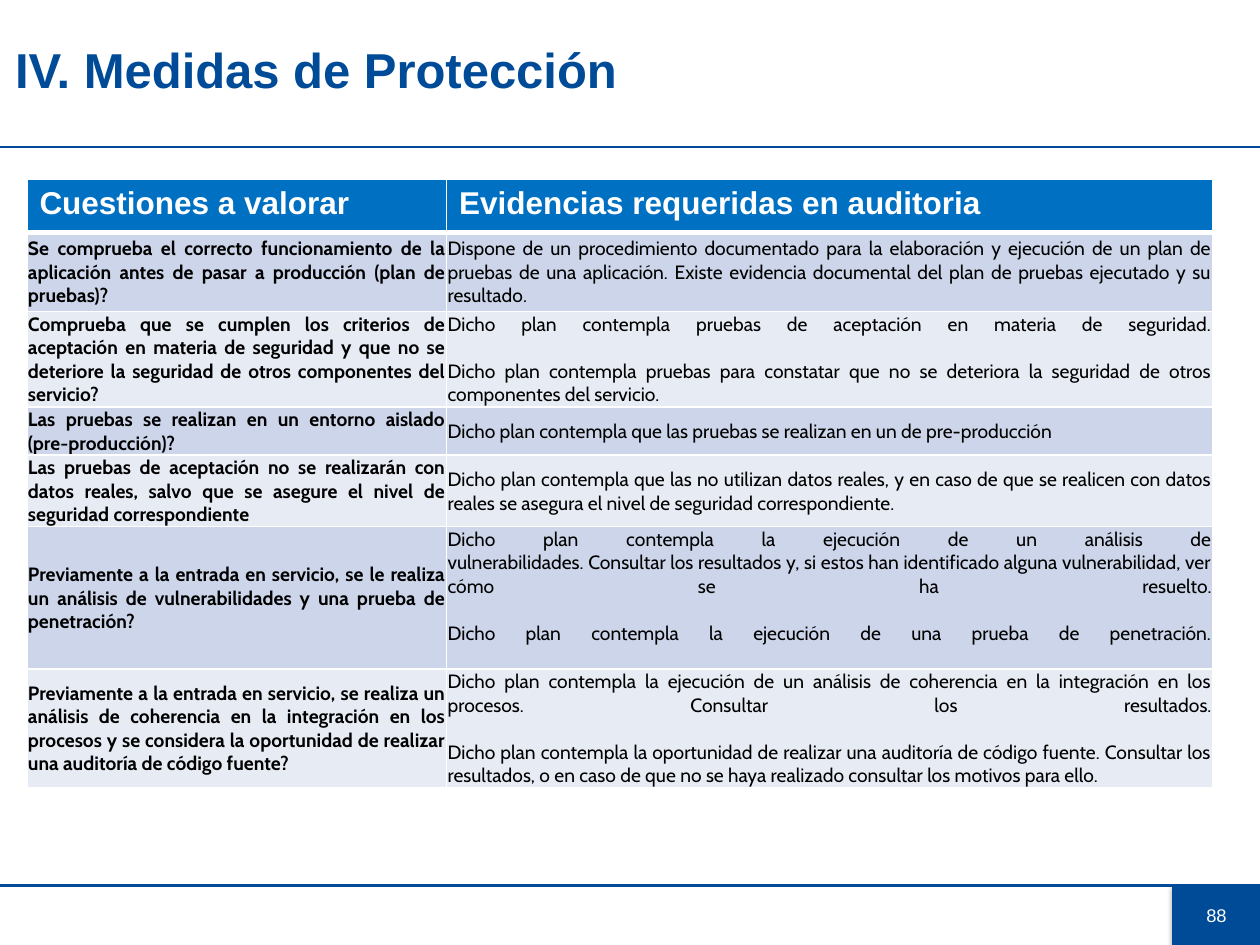
from copy import deepcopy

from lxml.etree import SubElement
from pptx import Presentation
from pptx.dml.color import RGBColor
from pptx.enum.shapes import MSO_CONNECTOR, MSO_SHAPE
from pptx.enum.text import MSO_ANCHOR, PP_ALIGN
from pptx.oxml.ns import qn
from pptx.util import Pt

NAVY = RGBColor(0x00, 0x4B, 0x98)
HEADER_BLUE = RGBColor(0x00, 0x70, 0xC2)
BANDS = (RGBColor(0xCC, 0xD5, 0xE9), RGBColor(0xE7, 0xEB, 0xF4))
WHITE = RGBColor(0xFF, 0xFF, 0xFF)
BLACK = RGBColor(0x00, 0x00, 0x00)

TITLE = "IV. Medidas de Protección"
PAGE_NUMBER = "88"
HEADINGS = ("Cuestiones a valorar", "Evidencias requeridas en auditoria")
# question, evidence, row height
QUESTIONS = [
    ("Se comprueba el correcto funcionamiento de la aplicación antes de pasar a producción "
     "(plan de pruebas)?",
     "Dispone de un procedimiento documentado para la elaboración y ejecución de un plan de "
     "pruebas de una aplicación. Existe evidencia documental del plan de pruebas ejecutado y "
     "su resultado.", 45.4),
    ("Comprueba que se cumplen los criterios de aceptación en materia de seguridad y que no se "
     "deteriore la seguridad de otros componentes del servicio?",
     "Dicho plan contempla pruebas de aceptación en materia de seguridad.\n\n"
     "Dicho plan contempla pruebas para constatar que no se deteriora la seguridad de otros "
     "componentes del servicio.", 54.2),
    ("Las pruebas se realizan en un entorno aislado (pre-producción)?",
     "Dicho plan contempla que las pruebas se realizan en un de pre-producción", 27.6),
    ("Las pruebas de aceptación no se realizarán con datos reales, salvo que se asegure el nivel "
     "de seguridad correspondiente",
     "Dicho plan contempla que las no utilizan datos reales, y en caso de que se realicen con "
     "datos reales se asegura el nivel de seguridad correspondiente.", 40.8),
    ("Previamente a la entrada en servicio, se le realiza un análisis de vulnerabilidades y una "
     "prueba de penetración?",
     "Dicho plan contempla la ejecución de un análisis de\n"
     "vulnerabilidades. Consultar los resultados y, si estos han identificado alguna "
     "vulnerabilidad, ver cómo se ha resuelto.\n\n"
     "Dicho plan contempla la ejecución de una prueba de penetración.\n", 80.8),
    ("Previamente a la entrada en servicio, se realiza un análisis de coherencia en la "
     "integración en los procesos y se considera la oportunidad de realizar una auditoría de "
     "código fuente?",
     "Dicho plan contempla la ejecución de un análisis de coherencia en la integración en los "
     "procesos. Consultar los resultados.\n\n"
     "Dicho plan contempla la oportunidad de realizar una auditoría de código fuente. Consultar "
     "los resultados, o en caso de que no se haya realizado consultar los motivos para ello.",
     67.6),
]

SLIDE_WIDTH, SLIDE_HEIGHT = 720, 540
HEADER_RULE_Y, FOOTER_RULE_Y = 84.1, 506
NUMBER_LEFT = 670.3
TABLE_LEFT, TABLE_TOP = 15.4, 102.5
COLUMN_WIDTHS = (239.8, 438)
HEADING_HEIGHT = 30.2


def write(paragraph, text, font_name, size, color, bold=False):
    """Fill a paragraph, giving its line breaks and its end the format of the run."""
    paragraph.text = text
    for run in paragraph.runs:
        font = run.font
        font.name, font.size, font.bold = font_name, Pt(size), bold
        font.color.rgb = color
    run_format = paragraph.runs[0].font._element
    for line_break in paragraph._p.findall(qn("a:br")):
        line_break.insert(0, deepcopy(run_format))
    SubElement(paragraph._p, qn("a:endParaRPr"), sz=str(size * 100) if size == int(size)
               else str(int(size * 100)))


def add_rule(slide, y):
    rule = slide.shapes.add_connector(
        MSO_CONNECTOR.STRAIGHT, Pt(0), Pt(y), Pt(SLIDE_WIDTH), Pt(y))
    rule.line.color.rgb = NAVY
    rule.line.width = Pt(1.5)
    SubElement(rule._element.spPr, qn("a:effectLst"))


def add_number_box(slide):
    box = slide.shapes.add_shape(
        MSO_SHAPE.RECTANGLE, Pt(NUMBER_LEFT), Pt(FOOTER_RULE_Y),
        Pt(SLIDE_WIDTH - NUMBER_LEFT), Pt(SLIDE_HEIGHT - FOOTER_RULE_Y))
    box.fill.solid()
    box.fill.fore_color.rgb = NAVY
    box.line.color.rgb = NAVY
    box.line.width = Pt(0.75)
    box.shadow.inherit = False
    effects = box._element.spPr.find(qn("a:effectLst"))
    shadow = SubElement(effects, qn("a:outerShdw"), blurRad=str(Pt(3.1)), dist=str(Pt(1.8)),
                        dir="5400000", rotWithShape="0")
    shade = SubElement(shadow, qn("a:srgbClr"), val=str(BLACK))
    SubElement(shade, qn("a:alpha"), val="35000")
    box.text_frame.vertical_anchor = MSO_ANCHOR.MIDDLE
    number = box.text_frame.paragraphs[0]
    number.alignment = PP_ALIGN.CENTER
    write(number, PAGE_NUMBER, "Arial", 10.5, WHITE)


def add_borders(cell, row):
    """White grid, with a heavier line between the headings and the body."""
    widths = {"a:lnL": 1, "a:lnR": 1, "a:lnT": 3 if row == 1 else 1, "a:lnB": 3 if row == 0 else 1}
    for tag, width in widths.items():
        border = SubElement(cell._tc.get_or_add_tcPr(), qn(tag), w=str(Pt(width)))
        SubElement(SubElement(border, qn("a:solidFill")), qn("a:srgbClr"), val=str(WHITE))


def add_question_table(slide):
    heights = [HEADING_HEIGHT] + [height for _, _, height in QUESTIONS]
    rows = [HEADINGS] + [(question, evidence) for question, evidence, _ in QUESTIONS]
    table = slide.shapes.add_table(
        len(rows), len(HEADINGS), Pt(TABLE_LEFT), Pt(TABLE_TOP),
        Pt(sum(COLUMN_WIDTHS)), Pt(sum(heights))).table
    for column, width in zip(table.columns, COLUMN_WIDTHS):
        column.width = Pt(width)
    for r, (texts, height) in enumerate(zip(rows, heights)):
        table.rows[r].height = Pt(height)
        for c, text in enumerate(texts):
            cell = table.cell(r, c)
            add_borders(cell, r)
            cell.fill.solid()
            cell.fill.fore_color.rgb = HEADER_BLUE if r == 0 else BANDS[(r - 1) % 2]
            paragraph = cell.text_frame.paragraphs[0]
            if r == 0:
                write(paragraph, text, "Arial", 18, WHITE, bold=True)
                continue
            cell.vertical_anchor = MSO_ANCHOR.MIDDLE
            cell.margin_left = cell.margin_right = cell.margin_top = Pt(0.6)
            cell.margin_bottom = Pt(0)
            paragraph.alignment = PP_ALIGN.JUSTIFY
            write(paragraph, text, "Cabin", 11, BLACK, bold=c == 0)


def add_title(slide):
    title = slide.shapes.title
    title.left, title.top, title.width, title.height = Pt(8.6), Pt(0), Pt(686.2), Pt(83.5)
    frame = title.text_frame
    frame.margin_left = frame.margin_right = Pt(0)
    frame.margin_top = frame.margin_bottom = Pt(3.6)
    frame.vertical_anchor = MSO_ANCHOR.MIDDLE
    heading = frame.paragraphs[0]
    heading.alignment = PP_ALIGN.LEFT
    heading.line_spacing = 0.9
    write(heading, TITLE, "Arial", 28, NAVY, bold=True)


def main():
    deck = Presentation()
    deck.slide_width, deck.slide_height = Pt(SLIDE_WIDTH), Pt(SLIDE_HEIGHT)
    slide = deck.slides.add_slide(deck.slide_layouts[5])
    add_rule(slide, HEADER_RULE_Y)
    add_number_box(slide)
    add_rule(slide, FOOTER_RULE_Y)
    add_title(slide)
    add_question_table(slide)
    deck.save("out.pptx")


if __name__ == "__main__":
    main()
